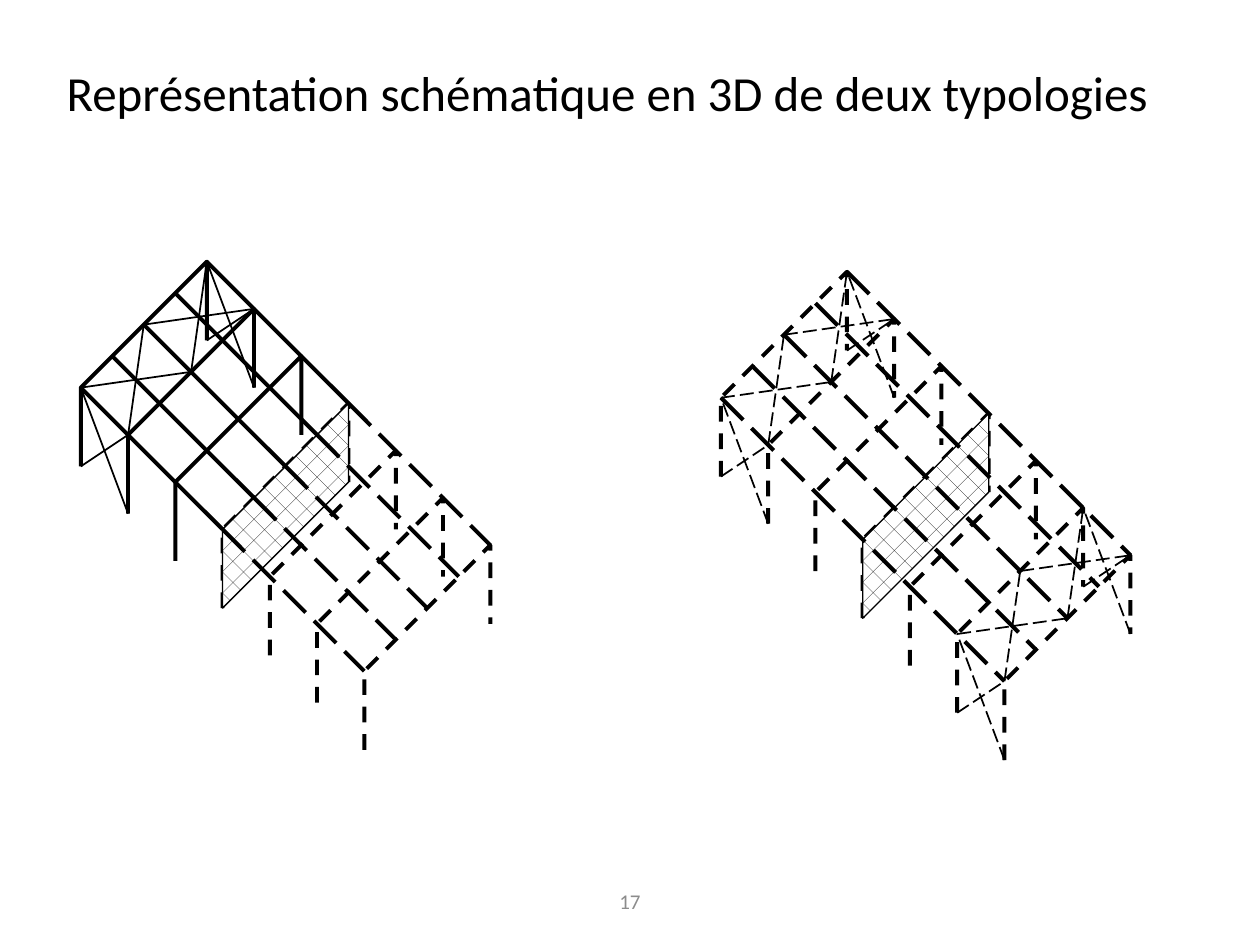
from pptx import Presentation
from pptx.dml.color import RGBColor as RGB
from pptx.enum.dml import MSO_LINE as Dash, MSO_PATTERN as Pat
from pptx.enum.shapes import MSO_CONNECTOR as Conn
from pptx.enum.text import MSO_ANCHOR as Anchor, PP_ALIGN as Align
from pptx.oxml.xmlchemy import OxmlElement as Elem
from pptx.util import Pt

TITLE = "Représentation schématique en 3D de deux typologies"
NUMBER = "17"

THEME = {
    "font": "Calibri",
    "ink": RGB(0, 0, 0),
    "paper": RGB(255, 255, 255),
    "grey": RGB(0x8C, 0x8C, 0x8C),
    "title": 28,
    "number": 12,
    "beam": 2.25,
    "brace": 1,
    "panel": 0.75,
}

BAY, PITCH, POST = 27, 18, 45
FRAMES, ROWS, WALL = 7, 5, 3

HALLS = [
    {
        "origin": (46.2, 221.5),
        "solid": 3,
        "spans": [(0, 3, None), (3, 6, Dash.LONG_DASH)],
        "braced": [0],
        "brace": None,
    },
    {
        "origin": (412, 227.3),
        "solid": 0,
        "spans": [(0, 6, Dash.LONG_DASH)],
        "braced": [0, 5],
        "brace": Dash.LONG_DASH,
    },
]

BRACES = [
    ((0, 0, 1), (1, 0, 0)),
    ((1, 0, 1), (0, 0, 0)),
    ((0, 4, 1), (1, 4, 0)),
    ((1, 4, 1), (0, 4, 0)),
    ((0, 0, 0), (1, 2, 0)),
    ((0, 2, 0), (1, 4, 0)),
    ((1, 0, 0), (0, 2, 0)),
    ((1, 2, 0), (0, 4, 0)),
]


def spot(hall, frame, row, drop=0):
    left, top = hall["origin"]
    return (Pt(left + BAY * frame + PITCH * row),
            Pt(top + BAY * frame - PITCH * row + POST * drop))


def pen(item, width, dash=None):
    item.line.color.rgb = THEME["ink"]
    item.line.width = Pt(width)
    if dash is not None:
        item.line.dash_style = dash


def bar(group, start, end, width, dash):
    line = group.shapes.add_connector(Conn.STRAIGHT, *start, *end)
    line._element.spPr.append(Elem("a:effectLst"))
    pen(line, width, dash)


def portal(group, hall, frame, close=False):
    last = ROWS - 1
    first, *rest = [spot(hall, frame, row, drop)
                    for row, drop in [(0, 1), (0, 0), (last, 0), (last, 1)]]
    form = group.shapes.build_freeform(*first)
    form.add_line_segments(rest, close=close)
    shape = form.convert_to_shape()
    shape.shadow.inherit = False
    return shape


def draw(slide, hall):
    group = slide.shapes.add_group_shape()
    for frame in reversed(range(FRAMES)):
        shape = portal(group, hall, frame)
        shape.fill.background()
        pen(shape, THEME["beam"],
            None if frame < hall["solid"] else Dash.DASH)

    wall = portal(group, hall, WALL, close=True)
    wall.fill.patterned()
    wall.fill.pattern = Pat.DIAGONAL_BRICK
    wall.fill.fore_color.rgb = THEME["ink"]
    wall.fill.back_color.rgb = THEME["paper"]
    pen(wall, THEME["panel"])

    for start, end, dash in hall["spans"]:
        for row in range(ROWS):
            bar(group, spot(hall, start, row), spot(hall, end, row),
                THEME["beam"], dash)
    for base in hall["braced"]:
        for ends in BRACES:
            start, end = [spot(hall, base + bay, row, drop)
                          for bay, row, drop in ends]
            bar(group, start, end, THEME["brace"], hall["brace"])


def label(slide, text, place, size, color, align, anchor):
    box = slide.shapes.add_textbox(*map(Pt, place))
    frame = box.text_frame
    frame.word_wrap = True
    frame.vertical_anchor = anchor
    para = frame.paragraphs[0]
    para.text = text
    para.alignment = align
    para.font.name = THEME["font"]
    para.font.size = Pt(size)
    para.font.color.rgb = color


def main():
    deck = Presentation()
    deck.slide_width, deck.slide_height = Pt(720), Pt(540)
    slide = deck.slides.add_slide(deck.slide_layouts[6])
    label(slide, NUMBER, (246, 500.5, 228, 28.8), THEME["number"],
          THEME["grey"], Align.CENTER, Anchor.MIDDLE)
    label(slide, TITLE, (31, 32, 655, 91), THEME["title"],
          THEME["ink"], Align.LEFT, Anchor.TOP)
    for hall in HALLS:
        draw(slide, hall)
    deck.save("out.pptx")


if __name__ == "__main__":
    main()
